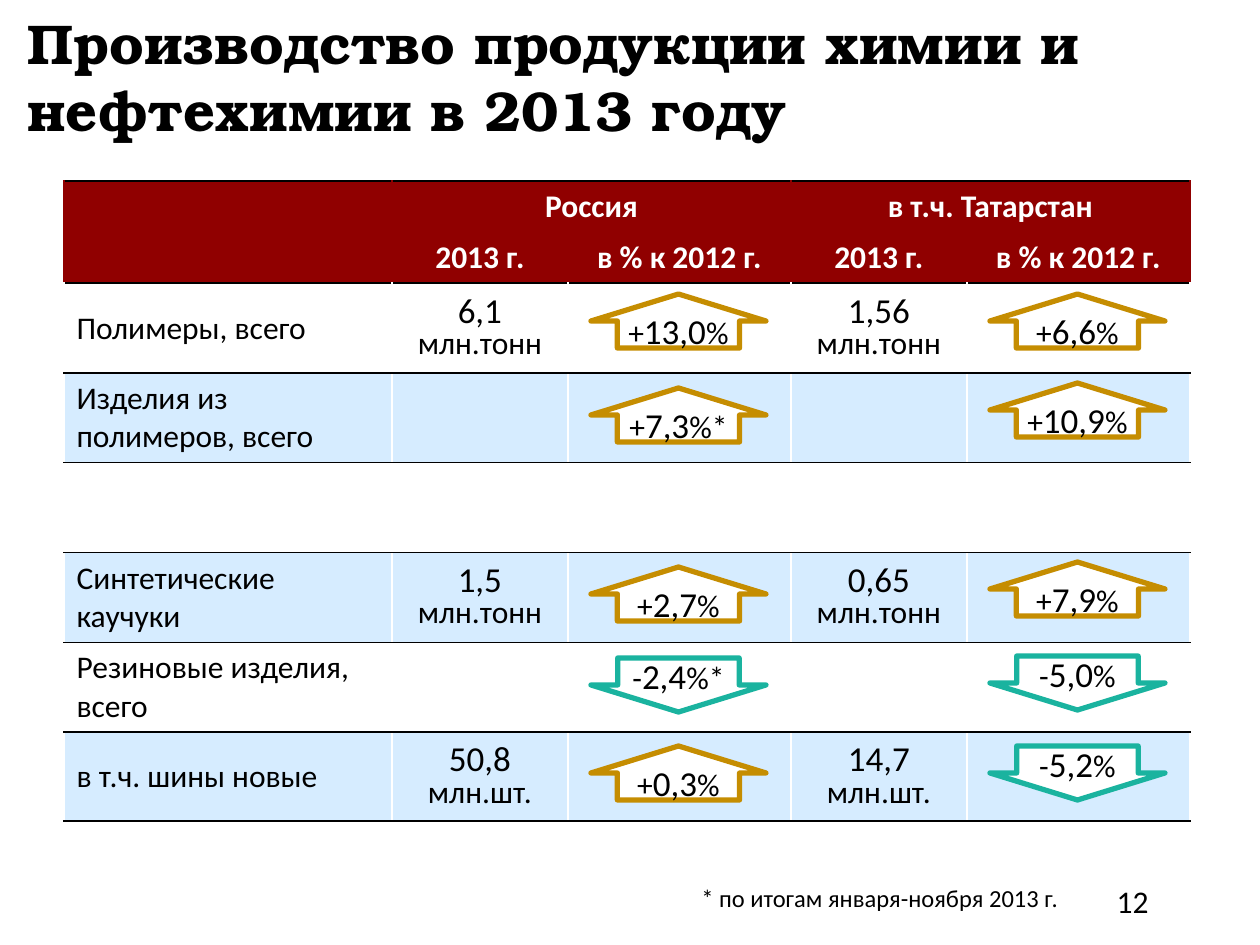
import pptx
import pptx.util
import pptx.dml.color
import pptx.enum.shapes
import pptx.enum.text
import pptx.oxml
import pptx.oxml.ns

# Content
TITLE = "Производство продукции химии и нефтехимии в 2013 году"
FOOTNOTE = "* по итогам января-ноября 2013 г."
PAGE_NUMBER = "12"
REGIONS = ["Россия", "в т.ч. Татарстан"]
MEASURES = ["2013 г.", "в % к 2012 г."]
# product, unit, then per region: volume, change (sign, number, mark), arrow top in px
PRODUCTS = [
    ("Полимеры, всего", "млн.тонн",
     [("6,1", ("+", "13,0", "%"), 294), ("1,56", ("+", "6,6", "%"), 294)]),
    ("Изделия из полимеров, всего", "",
     [("", ("+", "7,3", "%*"), 388), ("", ("+", "10,9", "%"), 383)]),
    ("", "", []),
    ("Синтетические каучуки", "млн.тонн",
     [("1,5", ("+", "2,7", "%"), 567), ("0,65", ("+", "7,9", "%"), 562)]),
    ("Резиновые изделия, всего", "",
     [("", ("-", "2,4", "%*"), 658), ("", ("-", "5,0", "%"), 656)]),
    ("в т.ч. шины новые", "млн.шт.",
     [("50,8", ("+", "0,3", "%"), 746), ("14,7", ("-", "5,2", "%"), 746)]),
]

# Layout in px
SCALE = 914400 // 126
COLUMNS = [328, 176, 223, 176, 223]
ROWS = [51, 51] + [90, 89] * 3
ARROW_LEFTS = [591, 990]
ARROW_SIZE = (175, 54)

# Format
BLACK, WHITE, RED, BAND = "000000", "FFFFFF", "900000", "D6ECFF"
BODY = {"name": "Calibri", "bold": False}
ARROWS = {
    "+": (pptx.enum.shapes.MSO_SHAPE.UP_ARROW, "C58D01", 0.698),
    "-": (pptx.enum.shapes.MSO_SHAPE.DOWN_ARROW, "1AB39F", 0.694),
}
ALIGN = pptx.enum.text.PP_ALIGN
ANCHOR = pptx.enum.text.MSO_ANCHOR


def color(value):
    return pptx.dml.color.RGBColor.from_string(value)


def px(*values):
    return [pptx.util.Emu(value * SCALE) for value in values]


def add_runs(paragraph, runs, align=ALIGN.LEFT, ink=BLACK, **changes):
    """Fill a paragraph with (text, point size) runs."""
    paragraph.alignment = align
    for text, size in runs:
        run = paragraph.add_run()
        run.text = text
        font_format = {**BODY, "size": pptx.util.Pt(size), **changes}
        for name, value in font_format.items():
            setattr(run.font, name, value)
        run.font.color.rgb = color(ink)


def set_borders(cell, colors):
    properties = cell._tc.get_or_add_tcPr()
    for index, (side, value) in enumerate(colors.items()):
        properties.insert(index, pptx.oxml.parse_xml(
            f'<a:ln{side} {pptx.oxml.ns.nsdecls("a")} w="12700"><a:solidFill>'
            f'<a:srgbClr val="{value}"/></a:solidFill></a:ln{side}>'))


def add_title(slide):
    title = slide.shapes.title
    title.left, title.top, title.width, title.height = px(15, 0, 1230, 157)
    frame = title.text_frame
    frame_format = {"word_wrap": True, "margin_top": 0, "vertical_anchor": ANCHOR.MIDDLE,
                    "auto_size": pptx.enum.text.MSO_AUTO_SIZE.NONE}
    for name, value in frame_format.items():
        setattr(frame, name, value)
    add_runs(frame.paragraphs[0], [(TITLE, 32)], name="TeX Gyre Bonum", bold=True)


def add_production_table(slide):
    table = slide.shapes.add_table(
        len(ROWS), len(COLUMNS), *px(64, 181, sum(COLUMNS), sum(ROWS))).table
    table.first_row = table.horz_banding = False
    for column, width in zip(table.columns, px(*COLUMNS)):
        column.width = width
    for row, height in zip(table.rows, px(*ROWS)):
        row.height = height

    # Fills and borders
    for row in range(len(ROWS)):
        header = row < 2
        fill = RED if header else BAND if row % 2 else WHITE
        for column in range(len(COLUMNS)):
            cell = table.cell(row, column)
            cell.fill.solid()
            cell.fill.fore_color.rgb = color(fill)
            cell.vertical_anchor = ANCHOR.MIDDLE if row else ANCHOR.TOP
            side = RED if header else WHITE
            set_borders(cell, {"L": side, "R": side,
                               "T": RED if row == 1 else BLACK,
                               "B": RED if row == 0 else BLACK})

    # Header
    table.cell(0, 0).merge(table.cell(1, 0))
    for index, region in enumerate(REGIONS):
        first = 1 + 2 * index
        table.cell(0, first).merge(table.cell(0, first + 1))
        headings = [(0, first, region)]
        headings += [(1, first + step, text) for step, text in enumerate(MEASURES)]
        for row, column, text in headings:
            add_runs(table.cell(row, column).text_frame.paragraphs[0],
                     [(text, 18)], ALIGN.CENTER, WHITE, bold=True)

    # Products and volumes
    for row, (product, unit, results) in enumerate(PRODUCTS, 2):
        if product:
            add_runs(table.cell(row, 0).text_frame.paragraphs[0], [(product, 18)])
        for index, (volume, change, top) in enumerate(results):
            if volume:
                frame = table.cell(row, 1 + 2 * index).text_frame
                add_runs(frame.paragraphs[0], [(volume, 20)], ALIGN.CENTER)
                add_runs(frame.add_paragraph(), [(unit, 18)], ALIGN.CENTER)
                for paragraph in frame.paragraphs:
                    paragraph.line_spacing = 0.8


def add_change_arrow(slide, left, top, change):
    kind, outline, shaft = ARROWS[change[0]]
    shape = slide.shapes.add_shape(kind, *px(left, top, *ARROW_SIZE))
    shape.shadow.inherit = False
    shape.adjustments[0], shape.adjustments[1] = shaft, 0.5
    shape.fill.solid()
    shape.fill.fore_color.rgb = color(WHITE)
    shape.line.color.rgb = color(outline)
    shape.line.width = pptx.util.Pt(3)
    frame = shape.text_frame
    frame.margin_left = frame.margin_right = pptx.util.Inches(0.02)
    frame.vertical_anchor = ANCHOR.MIDDLE
    add_runs(frame.paragraphs[0], zip(change, (18, 20, 18)), ALIGN.CENTER)


def add_note(slide, box, text, size, align):
    frame = slide.shapes.add_textbox(*px(*box)).text_frame
    frame.word_wrap = True
    add_runs(frame.paragraphs[0], [(text, size)], align)


def main():
    presentation = pptx.Presentation()
    presentation.slide_width, presentation.slide_height = px(1260, 945)
    slide = presentation.slides.add_slide(presentation.slide_layouts[5])
    add_title(slide)
    add_production_table(slide)
    add_note(slide, (689, 877, 571, 43), FOOTNOTE, 14, ALIGN.LEFT)
    for product, unit, results in PRODUCTS:
        for left, (volume, change, top) in zip(ARROW_LEFTS, results):
            add_change_arrow(slide, left, top, change)
    add_note(slide, (888, 876, 273, 50), PAGE_NUMBER, 18, ALIGN.RIGHT)
    presentation.save("out.pptx")


if __name__ == "__main__":
    main()
